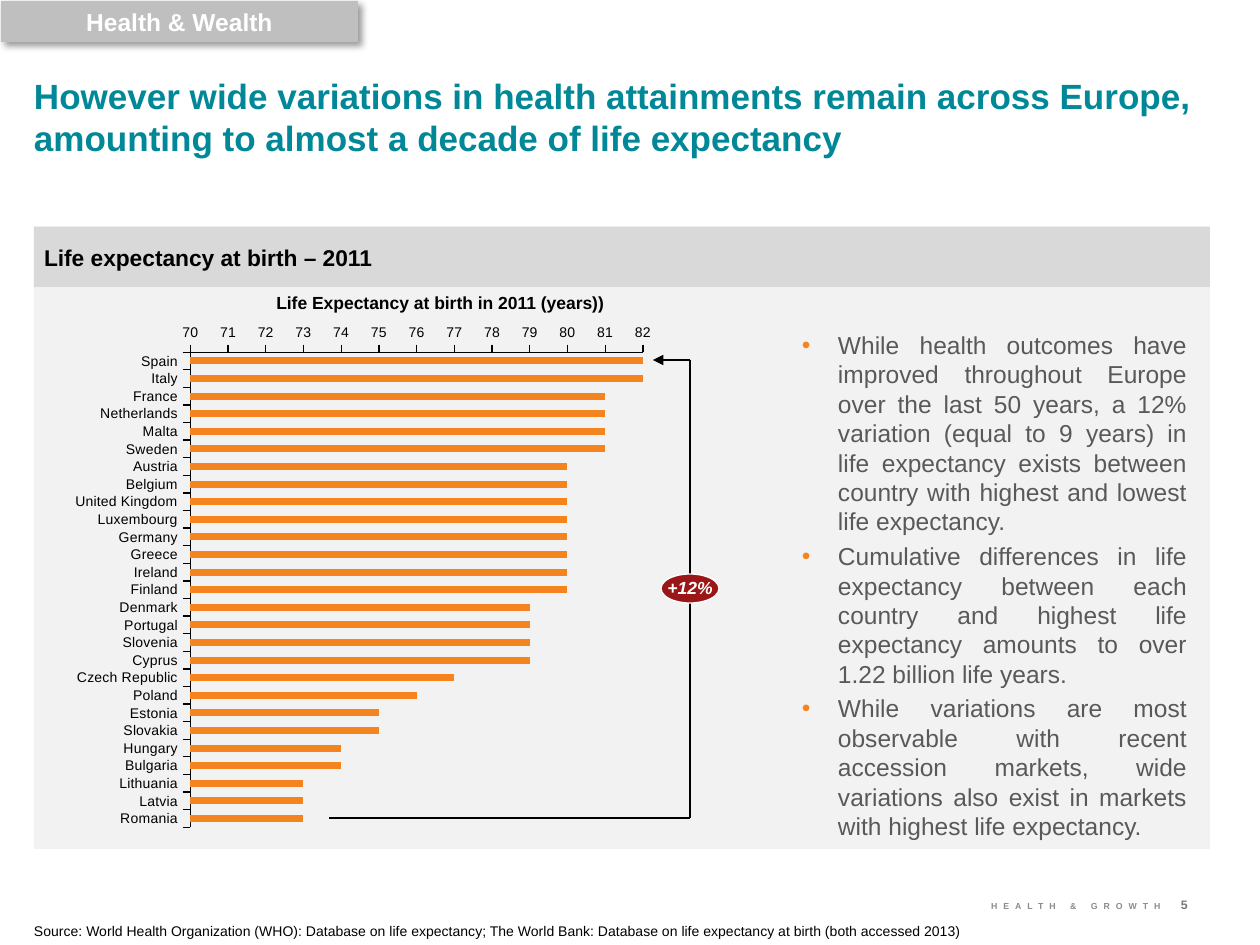
from lxml import etree
from pptx import Presentation
from pptx.chart.data import CategoryChartData
from pptx.dml.color import RGBColor
from pptx.enum.chart import XL_CHART_TYPE, XL_TICK_MARK
from pptx.enum.shapes import MSO_CONNECTOR, MSO_SHAPE
from pptx.enum.text import MSO_ANCHOR, PP_ALIGN
from pptx.oxml import parse_xml
from pptx.oxml.ns import nsdecls, qn
from pptx.util import Emu, Pt

FONT = "Arial"
BLACK, WHITE, ORANGE = "000000", "FFFFFF", "F5841F"
LIFE_YEARS = {
    82: ["Spain", "Italy"],
    81: ["France", "Netherlands", "Malta", "Sweden"],
    80: ["Austria", "Belgium", "United Kingdom", "Luxembourg", "Germany",
         "Greece", "Ireland", "Finland"],
    79: ["Denmark", "Portugal", "Slovenia", "Cyprus"],
    77: ["Czech Republic"],
    76: ["Poland"],
    75: ["Estonia", "Slovakia"],
    74: ["Hungary", "Bulgaria"],
    73: ["Lithuania", "Latvia", "Romania"],
}
FINDINGS = [
    "While health outcomes have improved throughout Europe over the last 50 years, "
    "a 12% variation (equal to 9 years) in life expectancy exists between country "
    "with highest and lowest life expectancy.",
    "Cumulative differences in life expectancy between each country and highest "
    "life expectancy amounts to over 1.22 billion life years.",
    "While variations are most observable with recent accession markets, wide "
    "variations also exist in markets with highest life expectancy.",
]


def px(n):
    return Emu(round(n * 914400 / 126))


def rgb(value):
    return RGBColor.from_string(value)


def set_font(font, size, color=BLACK, **formats):
    font.color.rgb = rgb(color)
    for name, value in {"name": FONT, "size": Pt(size), **formats}.items():
        setattr(font, name, value)


def write(sp, paragraphs, size, color=BLACK, inset=0, anchor=MSO_ANCHOR.TOP,
          wrap=True, align=PP_ALIGN.LEFT, spacing=None, **formats):
    tf = sp.text_frame
    frame = dict.fromkeys(("margin_left", "margin_right", "margin_top", "margin_bottom"),
                          px(inset))
    for name, value in {**frame, "word_wrap": wrap, "vertical_anchor": anchor}.items():
        setattr(tf, name, value)
    for i, text in enumerate(paragraphs):
        p = tf.add_paragraph() if i else tf.paragraphs[0]
        p.alignment, p.line_spacing = align, spacing
        r = p.add_run()
        r.text = text
        set_font(r.font, size, color, **formats)
    return tf


def add_text(s, box, text, size, **formats):
    return write(s.shapes.add_textbox(*map(px, box)), [text], size, **formats)


def add_block(s, box, fill, shape=MSO_SHAPE.RECTANGLE):
    sp = s.shapes.add_shape(shape, *map(px, box))
    sp.shadow.inherit = False
    sp.fill.solid()
    sp.fill.fore_color.rgb = rgb(fill)
    sp.line.fill.background()
    return sp


def add_section_tab(s, box):
    sp = add_block(s, box, "BFBFBF")
    effects = sp._element.spPr.find(qn("a:effectLst"))
    effects.append(parse_xml(
        f'<a:outerShdw {nsdecls("a")} blurRad="{Pt(4)}" dist="{Pt(3)}" dir="2700000" '
        'algn="tl" rotWithShape="0"><a:srgbClr val="000000"><a:alpha val="40000"/>'
        '</a:srgbClr></a:outerShdw>'))
    write(sp, ["Health & Wealth"], 14, WHITE, anchor=MSO_ANCHOR.MIDDLE,
          align=PP_ALIGN.CENTER, bold=True)


def add_panel(s, box):
    """Grey panel with its heading, chart, gap bracket and findings."""
    x, y, w, h = box
    add_block(s, box, "F2F2F2")
    write(add_block(s, (x, y + 1, w, 60), "D9D9D9"), ["Life expectancy at birth – 2011"],
          13, inset=10, anchor=MSO_ANCHOR.MIDDLE, bold=True)
    add_chart(s, (x + 20, y + 83, 620, 540))
    add_text(s, (x + 242, y + 68, 328, 19), "Life Expectancy at birth in 2011 (years))", 10,
             anchor=MSO_ANCHOR.BOTTOM, wrap=False, align=PP_ALIGN.CENTER, spacing=0.9,
             bold=True)
    add_gap_bracket(s, (x + 295, y + 134, 361, 458))
    add_findings(s, (x + 755, y + 98, 411, 529))


def add_chart(s, box):
    data = CategoryChartData()
    data.categories = [c for group in LIFE_YEARS.values() for c in group]
    data.add_series("Life expectancy",
                    [years for years, group in LIFE_YEARS.items() for _ in group])
    chart = s.shapes.add_chart(XL_CHART_TYPE.BAR_CLUSTERED, *map(px, box), data).chart
    chart.has_legend = chart.has_title = False
    set_font(chart.font, 8)
    plot = chart.plots[0]
    plot.gap_width, plot.vary_by_categories = 150, False
    bars = plot.series[0].format.fill
    bars.solid()
    bars.fore_color.rgb = rgb(ORANGE)
    for axis in (chart.category_axis, chart.value_axis):
        axis.has_major_gridlines = False
        axis.major_tick_mark = XL_TICK_MARK.OUTSIDE
        axis.format.line.color.rgb = rgb(BLACK)
        axis.format.line.width = Pt(0.75)
        set_font(axis.tick_labels.font, 8)
    chart.category_axis.reverse_order = True
    scale = {"minimum_scale": 70, "maximum_scale": 82, "major_unit": 1}
    for name, value in scale.items():
        setattr(chart.value_axis, name, value)
    chart.value_axis.tick_labels.number_format = "0"
    chart.value_axis.tick_labels.number_format_is_linked = False
    place_plot(chart, {"x": 0.22, "y": 0.08, "w": 0.73, "h": 0.88})


def place_plot(chart, shares):
    area = chart._chartSpace.chart.plotArea
    for old in area.findall(qn("c:layout")):
        area.remove(old)
    layout = etree.Element(qn("c:layout"))
    manual = etree.SubElement(layout, qn("c:manualLayout"))
    settings = {"layoutTarget": "inner", "xMode": "edge", "yMode": "edge", **shares}
    for name, value in settings.items():
        etree.SubElement(manual, qn(f"c:{name}")).set("val", str(value))
    area.insert(0, layout)


def add_gap_bracket(s, box):
    """Bracket from the lowest bar up to the highest one, with the gap in an oval."""
    x, y, w, h = box
    right, bottom = x + w, y + h
    points = [(x, bottom), (right, bottom), (right, y), (right - 37, y)]
    for start, end in zip(points, points[1:]):
        line = s.shapes.add_connector(MSO_CONNECTOR.STRAIGHT, *map(px, start + end))
        line.line.color.rgb = rgb(BLACK)
        line.line.width = Pt(1)
        etree.SubElement(line._element.spPr, qn("a:effectLst"))
    ln = line._element.spPr.find(qn("a:ln"))
    etree.SubElement(ln, qn("a:tailEnd")).set("type", "triangle")
    sp = add_block(s, (right - 29, y + h // 2 - 15, 58, 29), "9B1717", MSO_SHAPE.OVAL)
    sp.line.color.rgb = rgb(WHITE)
    sp.line.width = Pt(0.75)
    write(sp, ["+12%"], 10, WHITE, anchor=MSO_ANCHOR.MIDDLE, wrap=False,
          align=PP_ALIGN.CENTER, spacing=0.9, bold=True, italic=True)


def add_findings(s, box):
    sp = s.shapes.add_textbox(*map(px, box))
    tf = write(sp, FINDINGS, 14, "595959", align=PP_ALIGN.JUSTIFY)
    tf.margin_left = tf.margin_right = px(13)
    tf.margin_top = tf.margin_bottom = px(6)
    for i, p in enumerate(tf.paragraphs):
        if i:
            p.space_before = Pt(3)
        pPr = p._p.get_or_add_pPr()
        pPr.set("marL", str(px(36)))
        pPr.set("indent", str(-px(36)))
        color = etree.SubElement(pPr, qn("a:buClr"))
        etree.SubElement(color, qn("a:srgbClr")).set("val", ORANGE)
        etree.SubElement(pPr, qn("a:buFont")).set("typeface", FONT)
        etree.SubElement(pPr, qn("a:buChar")).set("char", "•")


def add_footer(s, box):
    x, y, w, h = box
    tf = add_text(s, (x + 740, y + 4, 387, 20), "HEALTH & GROWTH", 5, color="8C8C8C",
                  align=PP_ALIGN.RIGHT, bold=True)
    tf.paragraphs[0].runs[0]._r.get_or_add_rPr().set("spc", "340")
    add_text(s, (x + 1147, y, 54, 21), "5", 7, color="77787B", bold=True)
    add_text(s, (x, y + h - 50, 941, 50),
             "Source: World Health Organization (WHO): Database on life expectancy; "
             "The World Bank: Database on life expectancy at birth (both accessed 2013)",
             8, anchor=MSO_ANCHOR.BOTTOM, spacing=0.9)


def main():
    prs = Presentation()
    prs.slide_width, prs.slide_height = px(1260), px(945)
    s = prs.slides.add_slide(prs.slide_layouts[6])
    add_section_tab(s, (1, 1, 357, 41))
    add_text(s, (34, 75, 1176, 84),
             "However wide variations in health attainments remain across Europe, "
             "amounting to almost a decade of life expectancy", 20, color="008898", bold=True)
    add_panel(s, (34, 226, 1176, 623))
    add_footer(s, (34, 897, 1176, 43))
    prs.save("out.pptx")


if __name__ == "__main__":
    main()
